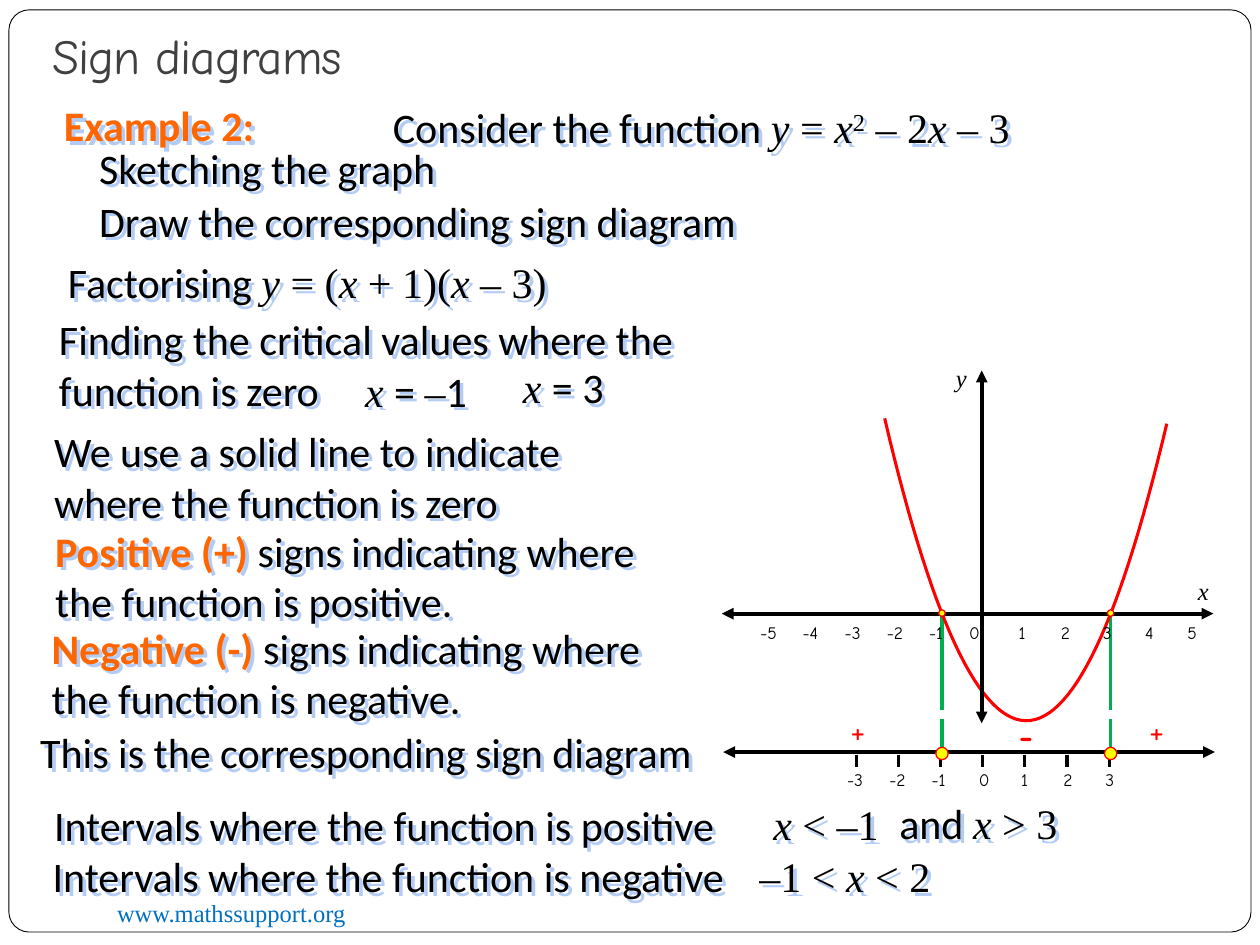
from lxml.etree import SubElement
from pptx import Presentation
from pptx.dml.color import RGBColor
from pptx.enum.shapes import MSO_CONNECTOR, MSO_SHAPE
from pptx.enum.text import MSO_ANCHOR, MSO_AUTO_SIZE
from pptx.oxml.ns import qn
from pptx.util import Cm, Pt

BLACK, WHITE, RED, ORANGE = "000000", "FFFFFF", "FF0000", "FF6600"
YELLOW, GREEN, SHADOW = "FFFF00", "00B050", "B3CCF5"
SANS, SERIF, HAND = "Calibri", "Times New Roman", "Comic Neue"
UNIT = 0.85
RISE = 0.54
ORIGIN = 5.29
ROOTS = (-1, 3)
STYLES = {
    "text": (SANS, False, False, BLACK),
    "key": (SANS, True, False, ORANGE),
    "math": (SERIF, False, False, BLACK),
    "var": (SERIF, False, True, BLACK),
    "power": (SERIF, False, False, BLACK),
}


def rgb(value):
    return RGBColor.from_string(value)


def set_font(r, name, size, color, bold=False, italic=False):
    r.font.name, r.font.size = name, Pt(size)
    r.font.bold, r.font.italic = bold, italic
    r.font.color.rgb = rgb(color)


def add_box(s, left, top, width, height):
    sp = s.shapes.add_textbox(Cm(left), Cm(top), Cm(width), Cm(height))
    sp.text_frame.word_wrap = True
    sp.text_frame.auto_size = MSO_AUTO_SIZE.SHAPE_TO_FIT_TEXT
    return sp


def add_label(s, left, top, width, height, text, name, size, color, **look):
    sp = add_box(s, left, top, width, height)
    p = sp.text_frame.paragraphs[0]
    p.text = text
    set_font(p.runs[0], name, size, color, **look)
    return sp


def add_shadow(sp):
    effects = SubElement(sp._element.spPr, qn("a:effectLst"))
    shadow = SubElement(effects, qn("a:outerShdw"), dist="38100", dir="2700000", algn="tl")
    SubElement(shadow, qn("a:srgbClr"), val=SHADOW)


def add_notes(s, box, rows):
    x, y = box
    for left, top, width, height, runs in rows:
        sp = add_box(s, x + left, y + top, width, height)
        add_shadow(sp)
        p = sp.text_frame.paragraphs[0]
        for style, text in runs:
            name, bold, italic, color = STYLES[style]
            r = p.add_run()
            r.text = text
            set_font(r, name, 24, color, bold, italic)
            if style == "power":
                r.font._element.set("baseline", "30000")


def add_line(s, x1, y1, x2, y2, color, width, arrows=False):
    c = s.shapes.add_connector(MSO_CONNECTOR.STRAIGHT, Cm(x1), Cm(y1), Cm(x2), Cm(y2))
    c.line.color.rgb, c.line.width = rgb(color), Pt(width)
    if arrows:
        for end in ("a:headEnd", "a:tailEnd"):
            SubElement(c.line._ln, qn(end), type="triangle")
    SubElement(c._element.spPr, qn("a:effectLst"))


def add_shape(s, kind, left, top, width, height, fill, line, weight):
    sp = s.shapes.add_shape(kind, Cm(left), Cm(top), Cm(width), Cm(height))
    sp.fill.solid()
    sp.fill.fore_color.rgb = rgb(fill)
    sp.line.color.rgb, sp.line.width = rgb(line), Pt(weight)
    sp.shadow.inherit = False
    return sp


def add_dots(s, x, y, size):
    for root in ROOTS:
        add_shape(s, MSO_SHAPE.OVAL, x + root * UNIT - size / 2, y - size / 2,
                  size, size, YELLOW, RED, 0.75)


def add_numbers(s, x, y, numbers, nudge=0):
    for n in numbers:
        width = 1.02 if n < 0 else 0.81
        center = x + n * UNIT - (nudge if n == 0 else 0)
        add_label(s, center - width / 2, y, width, 0.69, str(n), HAND, 10, BLACK)


def frame(s, x, y, width, height):
    sp = add_shape(s, MSO_SHAPE.ROUNDED_RECTANGLE, x, y, width, height, WHITE, BLACK, 0.5)
    sp.adjustments[0] = 0.022
    add_label(s, x + 1.93, y + 17.78, 8.26, 0.86, "www.mathssupport.org", SERIF, 14, "0070C0")
    title = add_label(s, x + 0.63, y + 0.23, 22.86, 1.4, "Sign diagrams", HAND, 28, "404040")
    tf = title.text_frame
    tf.auto_size = MSO_AUTO_SIZE.NONE
    tf.vertical_anchor = MSO_ANCHOR.BOTTOM
    p = tf.paragraphs[0]
    p.line_spacing = 0.85
    p.runs[0].font._element.set("spc", "-50")


def question(s, x, y):
    add_notes(s, (x, y), [
        (6.63, 0.05, 13.36, 1.27, [
            ("text", "Consider the function "), ("var", "y"), ("math", " = "), ("var", "x"),
            ("power", "2"), ("math", " – 2"), ("var", "x"), ("math", " – 3")]),
        (0, 0, 10.41, 1.27, [("key", "Example 2:")]),
        (0.71, 0.86, 13.36, 1.27, [("text", "Sketching the graph")]),
        (0.71, 1.93, 13.36, 1.27, [("text", "Draw the corresponding sign diagram")]),
    ])


def working(s, x, y):
    add_notes(s, (x, y), [
        (0.56, 0, 13.36, 1.27, [
            ("text", "Factorising "), ("var", "y"), ("math", " = ("), ("var", "x"),
            ("math", " + 1)("), ("var", "x"), ("math", " – 3)")]),
        (0.38, 1.15, 13.36, 2.31, [
            ("text", "Finding the critical values where the function is zero")]),
        (6.55, 2.19, 3.28, 1.27, [
            ("var", "x "), ("text", "= "), ("math", "–"), ("text", "1")]),
        (9.73, 2.11, 3.28, 1.27, [("var", "x "), ("text", "= 3")]),
        (0.28, 3.41, 11.02, 2.31, [
            ("text", "We use a solid line to indicate where the function is zero")]),
        (0.3, 5.41, 13.13, 2.31, [
            ("key", "Positive (+) "), ("text", "signs indicating where the function is positive.")]),
        (0.23, 7.37, 13.13, 2.31, [
            ("key", "Negative (-) "), ("text", "signs indicating where the function is negative.")]),
        (0, 9.48, 13.97, 1.27, [("text", "This is the corresponding sign diagram")]),
    ])


def conclusion(s, x, y):
    add_notes(s, (x, y), [
        (0, 1.07, 14.43, 1.27, [("text", "Intervals where the function is negative")]),
        (0.03, 0.05, 14.48, 1.27, [("text", "Intervals where the function is positive")]),
        (14.53, 0.03, 2.74, 1.27, [("var", "x"), ("math", " < –1")]),
        (14.25, 1.07, 4.06, 1.27, [("math", "–1 < "), ("var", "x"), ("math", " < 2")]),
        (17.07, 0, 5.77, 1.27, [("text", "and "), ("var", "x"), ("math", " > 3")]),
    ])


def drop_lines(s, x, y, height):
    for root in ROOTS:
        center = x + ORIGIN + root * UNIT
        add_line(s, center, y, center, y + height, GREEN, 1.75)
        add_shape(s, MSO_SHAPE.RECTANGLE, center - 0.38, y + 1.96, 0.76, 0.15, WHITE, WHITE, 1)


def graph(s, x, y, width, height):
    zero, axis = x + ORIGIN, y + 5.18
    start, stop, steps = -2.36, 4.33, 60
    values = [start + (stop - start) * i / steps for i in range(steps + 1)]
    points = [(Cm(zero + v * UNIT), Cm(axis - (v * v - 2 * v - 3) * RISE)) for v in values]
    builder = s.shapes.build_freeform(*points[0])
    builder.add_line_segments(points[1:], close=False)
    curve = builder.convert_to_shape()
    curve.fill.background()
    curve.line.color.rgb, curve.line.width = rgb(RED), Pt(1.75)
    curve.shadow.inherit = False
    add_line(s, x + 5.24, y + 0.28, x + 5.24, y + height, BLACK, 2.25, True)
    add_line(s, x, axis, x + width, axis, BLACK, 2.25, True)
    add_numbers(s, zero, axis + 0.04, range(-5, 6), nudge=0.15)
    add_dots(s, zero, axis - 0.01, 0.13)
    add_label(s, x + 4.47, y, 0.81, 0.86, "y", SERIF, 14, BLACK, italic=True)
    add_label(s, x + 9.35, y + 4.29, 0.81, 0.86, "x", SERIF, 14, BLACK, italic=True)


def sign_diagram(s, x, y, width):
    zero, axis = x + ORIGIN, y + 1.01
    add_line(s, x + 0.03, axis, x + width, axis, BLACK, 2.25, True)
    for n in range(-3, 4):
        tick = zero - 0.03 + n * UNIT
        add_line(s, tick, axis + 0.05, tick, axis + 0.31, BLACK, 1.75)
    add_numbers(s, zero + 0.05, axis + 0.21, range(-3, 4))
    for left, top, sign in [(2.34, 0, "+"), (5.74, 0.1, "-"), (8.36, 0, "+")]:
        add_label(s, x + left, y + top, 0.81, 1.12, sign, HAND, 20, RED, bold=sign == "-")
    add_dots(s, zero, axis + 0.03, 0.25)


def main():
    prs = Presentation()
    prs.slide_width, prs.slide_height = Cm(25.4), Cm(19.05)
    s = prs.slides.add_slide(prs.slide_layouts[6])
    frame(s, 0.18, 0.2, 25.04, 18.59)
    question(s, 1.04, 1.88)
    working(s, 0.56, 5.05)
    drop_lines(s, 14.55, 12.37, 2.75)
    graph(s, 14.55, 7.19, 9.91, 7.39)
    sign_diagram(s, 14.55, 14.15, 9.94)
    conclusion(s, 0.81, 15.95)
    prs.save("out.pptx")


if __name__ == "__main__":
    main()
